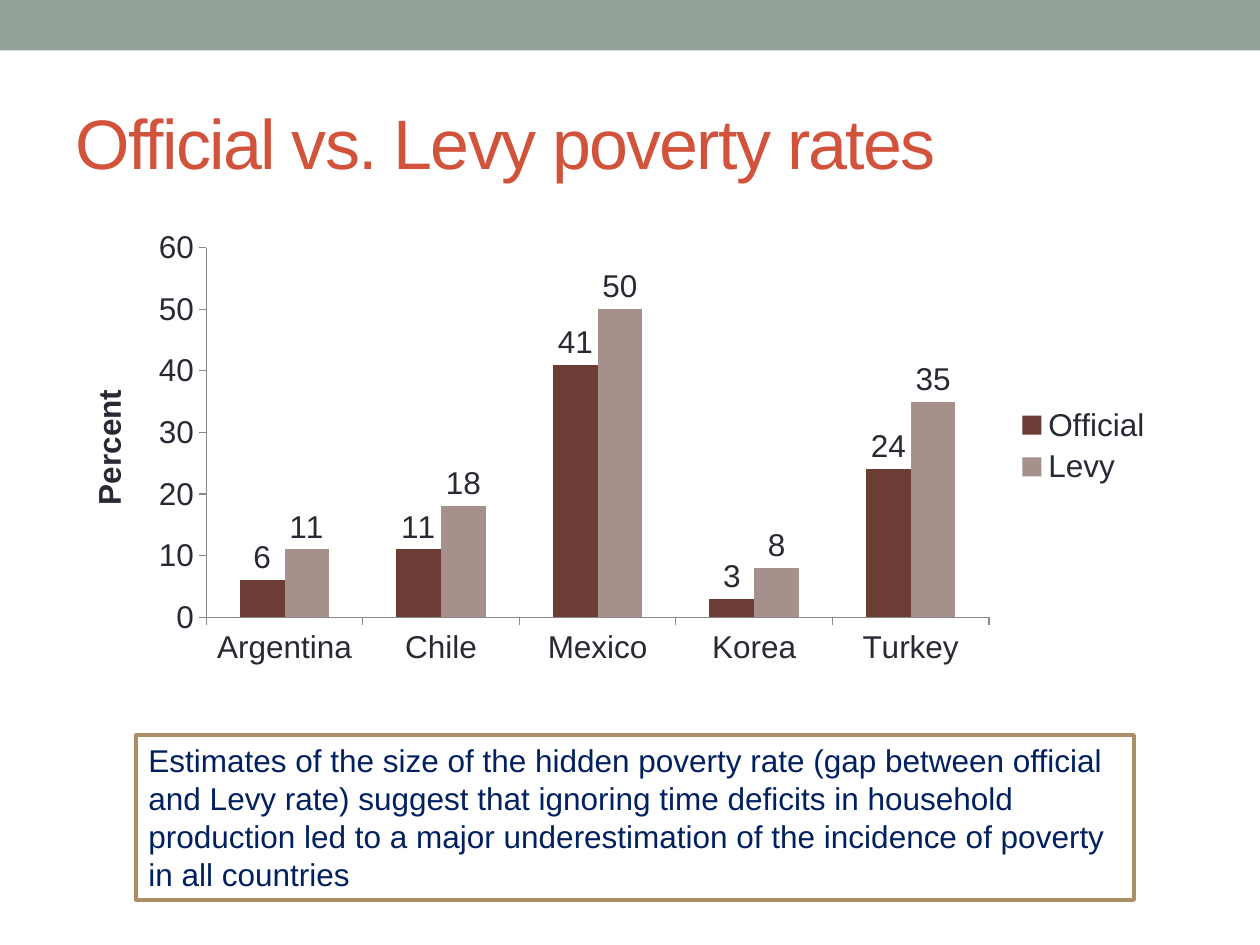
from lxml.etree import SubElement
from pptx import Presentation
from pptx.chart.data import CategoryChartData
from pptx.dml.color import RGBColor
from pptx.enum.chart import XL_CHART_TYPE, XL_LABEL_POSITION, XL_LEGEND_POSITION, XL_TICK_MARK
from pptx.enum.shapes import MSO_SHAPE
from pptx.enum.text import MSO_ANCHOR, PP_ALIGN
from pptx.oxml import parse_xml
from pptx.oxml.ns import nsdecls, qn
from pptx.util import Pt

# Content
TITLE = "Official vs. Levy poverty rates"
AXIS_TITLE = "Percent"
COUNTRIES = ["Argentina", "Chile", "Mexico", "Korea", "Turkey"]
RATES = {"Official": [6, 11, 41, 3, 24], "Levy": [11, 18, 50, 8, 35]}
NOTE = ("Estimates of the size of the hidden poverty rate (gap between official and Levy rate) "
        "suggest that ignoring time deficits in household production led to a major "
        "underestimation of the incidence of poverty in all countries")

# Theme and places (points)
THEME = {
    "font": "Arial", "title_size": 40, "body_size": 18,
    "band": "93A299", "title": "D2533C", "text": "292934", "note": "002060",
    "border": "AD8F67", "axis": "898989", "paper": "FFFFFF",
    "Official": "6B3D35", "Levy": "A5908C",
}
BOXES = {
    "band": (0, 0, 720, 28.8),
    "title": (36, 41.76, 648, 77.76),
    "chart": (36, 126, 630, 257.76),
    "note": (77.76, 420, 570.24, 94.32),
}
PLOT = {"x": 0.13, "y": 0.06, "w": 0.71, "h": 0.82}  # shares of the chart frame


def box(name):
    return [Pt(v) for v in BOXES[name]]


def color(name):
    return RGBColor.from_string(THEME[name])


def set_font(font, color_name, size="body_size", **extra):
    values = {"name": THEME["font"], "size": Pt(THEME[size]), **extra}
    for key, value in values.items():
        setattr(font, key, value)
    font.color.rgb = color(color_name)


def add_rect(s, name, fill, line=None):
    sp = s.shapes.add_shape(MSO_SHAPE.RECTANGLE, *box(name))
    sp.shadow.inherit = False
    sp.fill.solid()
    sp.fill.fore_color.rgb = color(fill)
    if line:
        sp.line.color.rgb = color(line)
        sp.line.width = Pt(2.08)
    else:
        sp.line.fill.background()
    return sp


def place_plot(chart):
    area = chart.plots[0]._element.getparent()
    for old in area.findall(qn("c:layout")):
        area.remove(old)
    layout = parse_xml(f"<c:layout {nsdecls('c')}><c:manualLayout/></c:layout>")
    settings = {"layoutTarget": "inner", "xMode": "edge", "yMode": "edge", **PLOT}
    for tag, value in settings.items():
        SubElement(layout[0], qn(f"c:{tag}")).set("val", str(value))
    area.insert(0, layout)


prs = Presentation()
prs.slide_width, prs.slide_height = Pt(720), Pt(540)
s = prs.slides.add_slide(prs.slide_layouts[5])

# Top band
add_rect(s, "band", "band")

# Title
title = s.shapes.title
title.left, title.top, title.width, title.height = box("title")
tf = title.text_frame
tf.vertical_anchor = MSO_ANCHOR.MIDDLE
p = tf.paragraphs[0]
p.alignment = PP_ALIGN.LEFT
r = p.add_run()
r.text = TITLE
set_font(r.font, "title", "title_size")
r.font._element.set("spc", "-100")

# Chart
data = CategoryChartData(number_format="0")
data.categories = COUNTRIES
for name, values in RATES.items():
    data.add_series(name, values)
chart = s.shapes.add_chart(XL_CHART_TYPE.COLUMN_CLUSTERED, *box("chart"), data).chart
set_font(chart.font, "text")
chart.has_title = False
chart.has_legend = True
chart.legend.position = XL_LEGEND_POSITION.RIGHT
chart.legend.include_in_layout = False
place_plot(chart)

# Axes
for axis in (chart.category_axis, chart.value_axis):
    axis.has_major_gridlines = False
    axis.major_tick_mark = XL_TICK_MARK.OUTSIDE
    axis.minor_tick_mark = XL_TICK_MARK.NONE
    axis.format.line.color.rgb = color("axis")
axis = chart.value_axis
axis.minimum_scale, axis.maximum_scale, axis.major_unit = 0, 60, 10
axis.tick_labels.number_format = "0"
axis.tick_labels.number_format_is_linked = False
r = axis.axis_title.text_frame.paragraphs[0].add_run()
r.text = AXIS_TITLE
set_font(r.font, "text", bold=True)

# Columns and their labels
plot = chart.plots[0]
plot.gap_width, plot.overlap, plot.vary_by_categories = 150, 0, False
for series in plot.series:
    series.format.fill.solid()
    series.format.fill.fore_color.rgb = color(series.name)
    labels = series.data_labels
    formats = {"show_value": True, "position": XL_LABEL_POSITION.OUTSIDE_END,
               "number_format": "0", "number_format_is_linked": False}
    for key, value in formats.items():
        setattr(labels, key, value)
    set_font(labels.font, "text")

# Note
tf = add_rect(s, "note", "paper", "border").text_frame
tf.word_wrap = True
tf.vertical_anchor = MSO_ANCHOR.TOP
p = tf.paragraphs[0]
p.alignment = PP_ALIGN.LEFT
r = p.add_run()
r.text = NOTE
set_font(r.font, "note")

prs.save("out.pptx")
